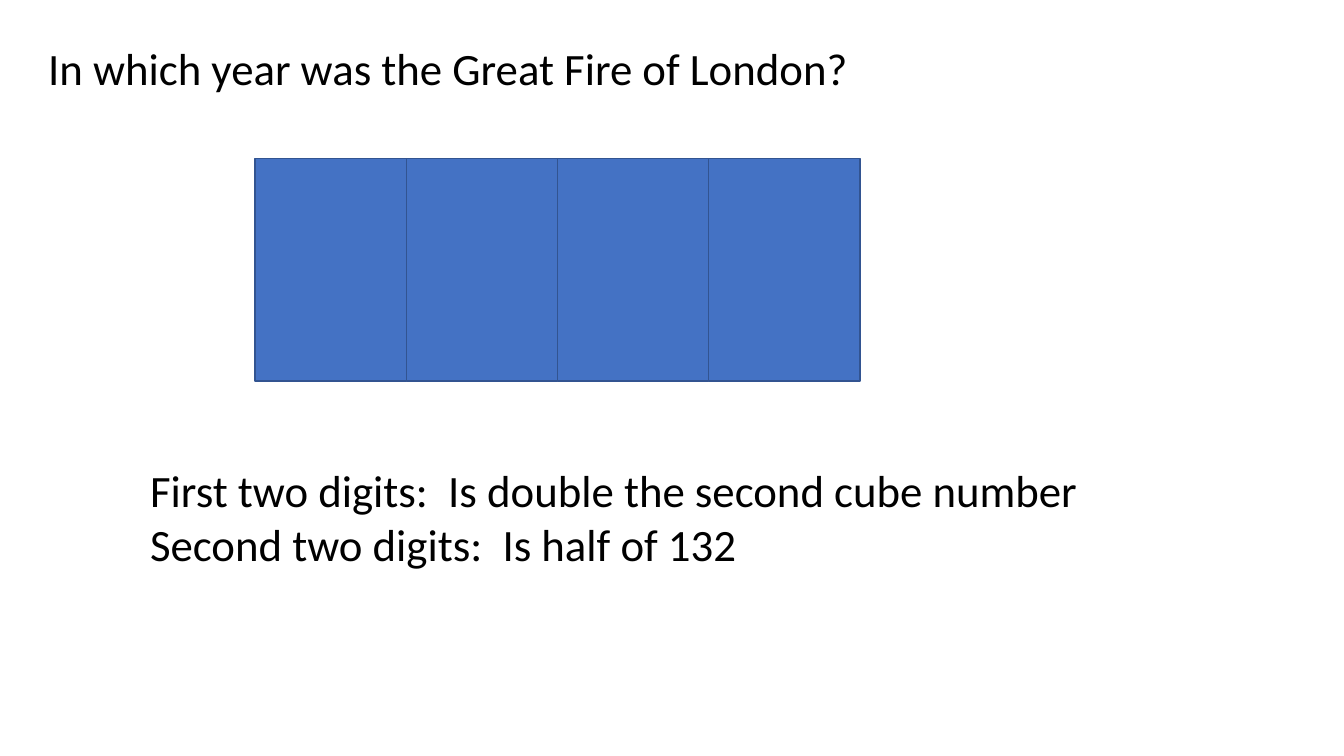
from dataclasses import dataclass

from pptx import Presentation
from pptx.dml.color import RGBColor
from pptx.enum.shapes import MSO_SHAPE
from pptx.enum.text import MSO_AUTO_SIZE
from pptx.slide import Slide
from pptx.util import Inches, Pt

COLUMN = ROW = Inches(0.5)
COLORS = {"text": "000000", "cover": "4472C4", "outline": "325491"}
DIGIT_COUNT = 4


@dataclass(frozen=True)
class Area:
    column: float
    row: float
    columns: float
    rows: float

    def box(self) -> tuple[int, int, int, int]:
        return (
            round(self.column * COLUMN),
            round(self.row * ROW),
            round(self.columns * COLUMN),
            round(self.rows * ROW),
        )


QUESTION = Area(0.76, 0.72, 23.8, 1.28)
FIRST_COVER = Area(5.06, 3.14, 3, 4.42)
CLUES = Area(2.78, 9.08, 22.08, 2.36)


def color(name: str) -> RGBColor:
    return RGBColor.from_string(COLORS[name])


def add_text(slide: Slide, area: Area, lines: list[str], *, size: float = 32,
             font: str = "Calibri", ink: str = "text") -> None:
    frame = slide.shapes.add_textbox(*area.box()).text_frame
    frame.word_wrap = True
    frame.auto_size = MSO_AUTO_SIZE.SHAPE_TO_FIT_TEXT
    frame.text = "\n".join(lines)
    for paragraph in frame.paragraphs:
        paragraph.font.size = Pt(size)
        paragraph.font.name = font
        paragraph.font.color.rgb = color(ink)


def add_cover(slide: Slide, area: Area) -> None:
    cover = slide.shapes.add_shape(MSO_SHAPE.RECTANGLE, *area.box())
    cover.shadow.inherit = False
    cover.fill.solid()
    cover.fill.fore_color.rgb = color("cover")
    cover.line.color.rgb = color("outline")
    cover.line.width = Pt(1)


def main() -> None:
    deck = Presentation()
    deck.slide_width = Inches(13.33)
    deck.slide_height = Inches(7.5)
    slide = deck.slides.add_slide(deck.slide_layouts[6])

    add_text(slide, QUESTION, ["In which year was the Great Fire of London?"])
    for digit in range(DIGIT_COUNT):
        column = FIRST_COVER.column + digit * FIRST_COVER.columns
        add_cover(slide, Area(column, FIRST_COVER.row, FIRST_COVER.columns, FIRST_COVER.rows))
    add_text(slide, CLUES, [
        "First two digits:  Is double the second cube number",
        "Second two digits:  Is half of 132",
    ])

    deck.save("out.pptx")


if __name__ == "__main__":
    main()
